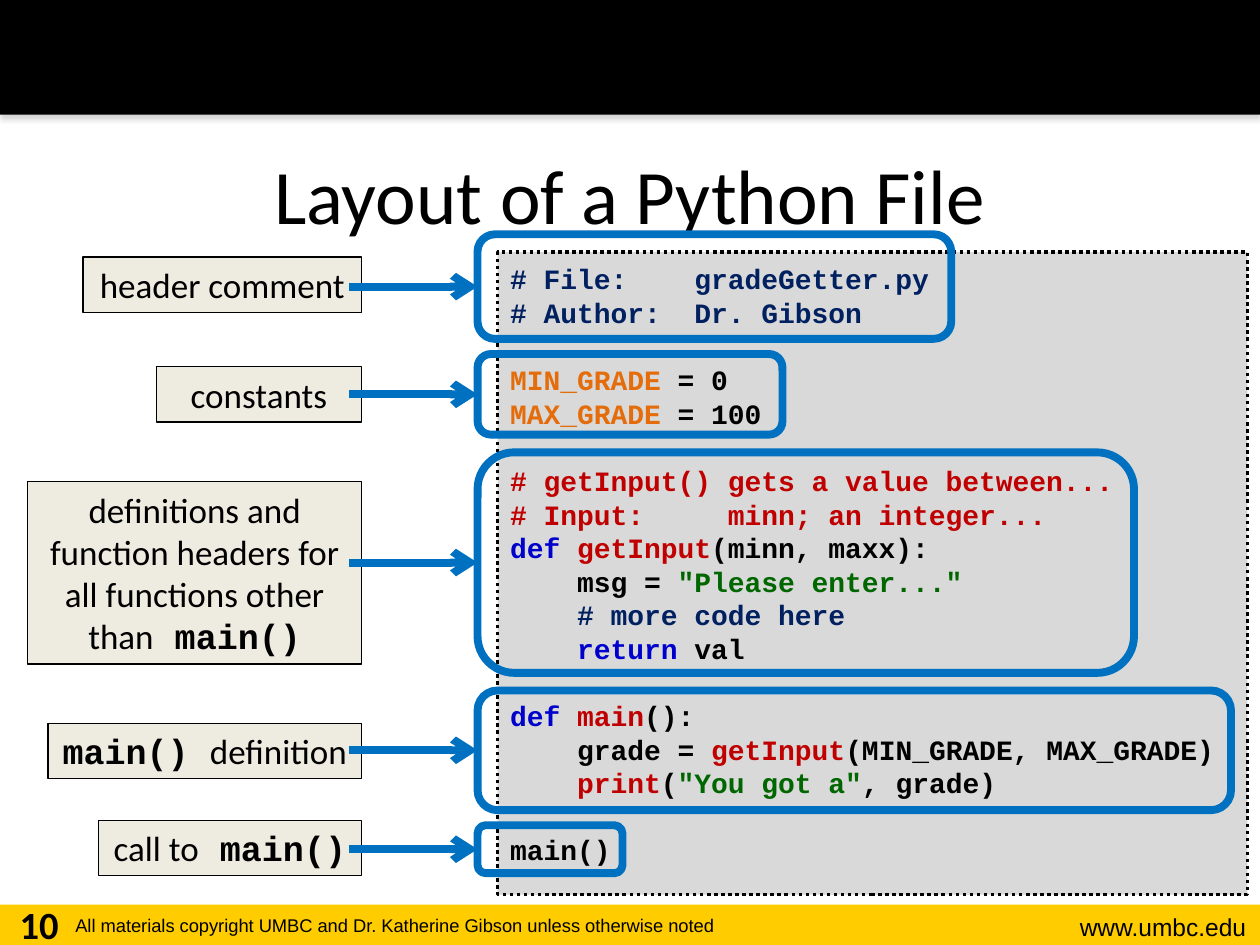
from lxml import etree
from pptx import Presentation
from pptx.dml.color import RGBColor
from pptx.enum.dml import MSO_LINE
from pptx.enum.shapes import MSO_CONNECTOR, MSO_SHAPE
from pptx.enum.text import MSO_ANCHOR, PP_ALIGN
from pptx.oxml.ns import qn
from pptx.util import Inches, Pt

RECT, ROUND = MSO_SHAPE.RECTANGLE, MSO_SHAPE.ROUNDED_RECTANGLE
LINE = MSO_CONNECTOR.STRAIGHT
DOTS = MSO_LINE.ROUND_DOT
TOP, MID = MSO_ANCHOR.TOP, MSO_ANCHOR.MIDDLE
LEFT, CENTER, RIGHT = PP_ALIGN.LEFT, PP_ALIGN.CENTER, PP_ALIGN.RIGHT

WIDE, HIGH = Inches(10), Inches(7.5)
COL, ROW = WIDE / 100, HIGH / 75
SANS, BODY, MONO = "Arial", "Calibri", "Courier New"
COLORS = {
    "black": "000000", "gold": "FFCC00", "gray": "D9D9D9", "cream": "EEECE1",
    "blue": "0070C0", "navy": "002060", "orange": "E46C0A", "red": "C00000",
    "key": "0000CC", "green": "006600", "shade": "808080",
}
PITCH = Pt(19.2)
EDGE, START, FRAME = 28.7, 27.7, 37.9

CODE = [
    [[("navy", "# File:    gradeGetter.py")],
     [("navy", "# Author:  Dr. Gibson")]],
    [[("orange", "MIN_GRADE "), ("black", "= 0")],
     [("orange", "MAX_GRADE "), ("black", "= 100")]],
    [[("red", "# getInput() gets a value between...")],
     [("red", "# Input:     minn; an integer...")],
     [("key", "def "), ("red", "getInput"), ("black", "(minn, maxx):")],
     [("black", "    msg = "), ("green", '"Please enter..."')],
     [("navy", "    # more code here")],
     [("key", "    return "), ("black", "val")]],
    [[("key", "def "), ("red", "main"), ("black", "():")],
     [("black", "    grade = "), ("red", "getInput"),
      ("black", "(MIN_GRADE, MAX_GRADE)")],
     [("red", "    print"), ("black", "("), ("green", '"You got a"'),
      ("black", ", grade)")]],
    [[("black", "main()")]],
]

# label runs, label (width, top, height), frame (top, width, height)
PARTS = [
    ([(BODY, "header comment")], (22.1, 20.4, 4.4), (18.6, 37.6, 8.3)),
    ([(BODY, "constants")], (16.3, 29.1, 4.4), (28.1, 24.2, 6.4)),
    ([(BODY, "definitions and function headers for all functions other than"),
      (MONO, " main()")], (26.5, 38.2, 14.5), (35.9, 52.1, 17.5)),
    ([(MONO, "main() "), (BODY, "definition")],
     (24.9, 57.4, 4.4), (54.8, 59.8, 9.5)),
    ([(BODY, "call to"), (MONO, " main()")],
     (20.9, 65.1, 4.4), (65.5, 11.5, 3.8)),
]


def color(name):
    return RGBColor.from_string(COLORS[name])


def place(x, y, w, h):
    return [round(v) for v in (x * COL, y * ROW, w * COL, h * ROW)]


def style(run, font, size, ink="black", bold=False):
    run.font.name, run.font.size, run.font.bold = font, Pt(size), bold
    run.font.color.rgb = color(ink)


def add_box(slide, kind, area, fill=None, line=None, width=1):
    box = slide.shapes.add_shape(kind, *place(*area))
    box.shadow.inherit = False
    if fill:
        box.fill.solid()
        box.fill.fore_color.rgb = color(fill)
    else:
        box.fill.background()
    if line:
        box.line.color.rgb = color(line)
        box.line.width = Pt(width)
    else:
        box.line.fill.background()
    return box


def add_text(slide, area, text, font, size, align, bold=False):
    frame = slide.shapes.add_textbox(*place(*area)).text_frame
    frame.word_wrap = True
    frame.text = text
    para = frame.paragraphs[0]
    para.alignment = align
    style(para.runs[0], font, size, bold=bold)


def add_shade(shape):
    effects = shape._element.spPr.find(qn("a:effectLst"))
    shade = etree.SubElement(effects, qn("a:outerShdw"), blurRad=str(Pt(3.1)),
                             dist=str(Pt(1.8)), dir="5400000", rotWithShape="0")
    tint = etree.SubElement(shade, qn("a:srgbClr"), val=COLORS["shade"])
    etree.SubElement(tint, qn("a:alpha"), val="35000")


def add_title(slide, text):
    title = slide.shapes.title
    title.left, title.top, title.width, title.height = place(5, 9.1, 90, 12.5)
    frame = title.text_frame
    frame.text = text
    frame.vertical_anchor = MID
    frame.paragraphs[0].alignment = CENTER
    style(frame.paragraphs[0].runs[0], BODY, 44)


def add_code(slide):
    box = add_box(slide, RECT, (39.5, 20, 59.5, 51), "gray", "black", 2)
    box.line.dash_style = DOTS
    frame = box.text_frame
    frame.word_wrap = True
    frame.vertical_anchor = TOP
    frame.margin_top = Inches(0.08)
    para = frame.paragraphs[0]
    for block, lines in enumerate(CODE):
        for row, runs in enumerate(lines):
            if block or row:
                para = frame.add_paragraph()
            para.alignment = LEFT
            para.line_spacing = PITCH
            para.space_before = PITCH if block and not row else Pt(0)
            for ink, text in runs:
                run = para.add_run()
                run.text = text
                style(run, MONO, 16, ink, True)


def add_label(slide, runs, width, top, height):
    box = add_box(slide, RECT, (EDGE - width, top, width, height),
                  "cream", "black", 0.75)
    frame = box.text_frame
    frame.word_wrap = True
    para = frame.paragraphs[0]
    para.alignment = CENTER
    for font, text in runs:
        run = para.add_run()
        run.text = text
        style(run, font, 20, bold=font == MONO)


def add_arrow(slide, frame):
    mid = frame.top + frame.height // 2
    arrow = slide.shapes.add_connector(LINE, round(START * COL), mid,
                                       frame.left, mid)
    arrow.end_connect(frame, 1)
    arrow.line.color.rgb = color("blue")
    arrow.line.width = Pt(4.5)
    etree.SubElement(arrow.line._get_or_add_ln(), qn("a:tailEnd"), type="arrow")
    etree.SubElement(arrow._element.spPr, qn("a:effectLst"))


def add_part(slide, runs, label, area):
    top, width, height = area
    frame = add_box(slide, ROUND, (FRAME, top, width, height),
                    line="blue", width=4.5)
    add_label(slide, runs, *label)
    add_arrow(slide, frame)


def main():
    deck = Presentation()
    deck.slide_width, deck.slide_height = WIDE, HIGH
    slide = deck.slides.add_slide(deck.slide_layouts[5])
    add_box(slide, RECT, (0, 71.8, 100, 3.2), "gold")
    add_shade(add_box(slide, RECT, (0, 0, 100, 9.1), "black"))
    add_text(slide, (80, 71.9, 19.9, 3.4), "www.umbc.edu", SANS, 14, RIGHT)
    add_text(slide, (5, 72.1, 65.6, 2.9),
             "All materials copyright UMBC and Dr. Katherine Gibson "
             "unless otherwise noted", SANS, 10.5, LEFT)
    add_title(slide, "Layout of a Python File")
    add_text(slide, (0, 71, 6.2, 4), "10", BODY, 22, CENTER, True)
    add_code(slide)
    for part in PARTS:
        add_part(slide, *part)
    deck.save("out.pptx")


if __name__ == "__main__":
    main()
